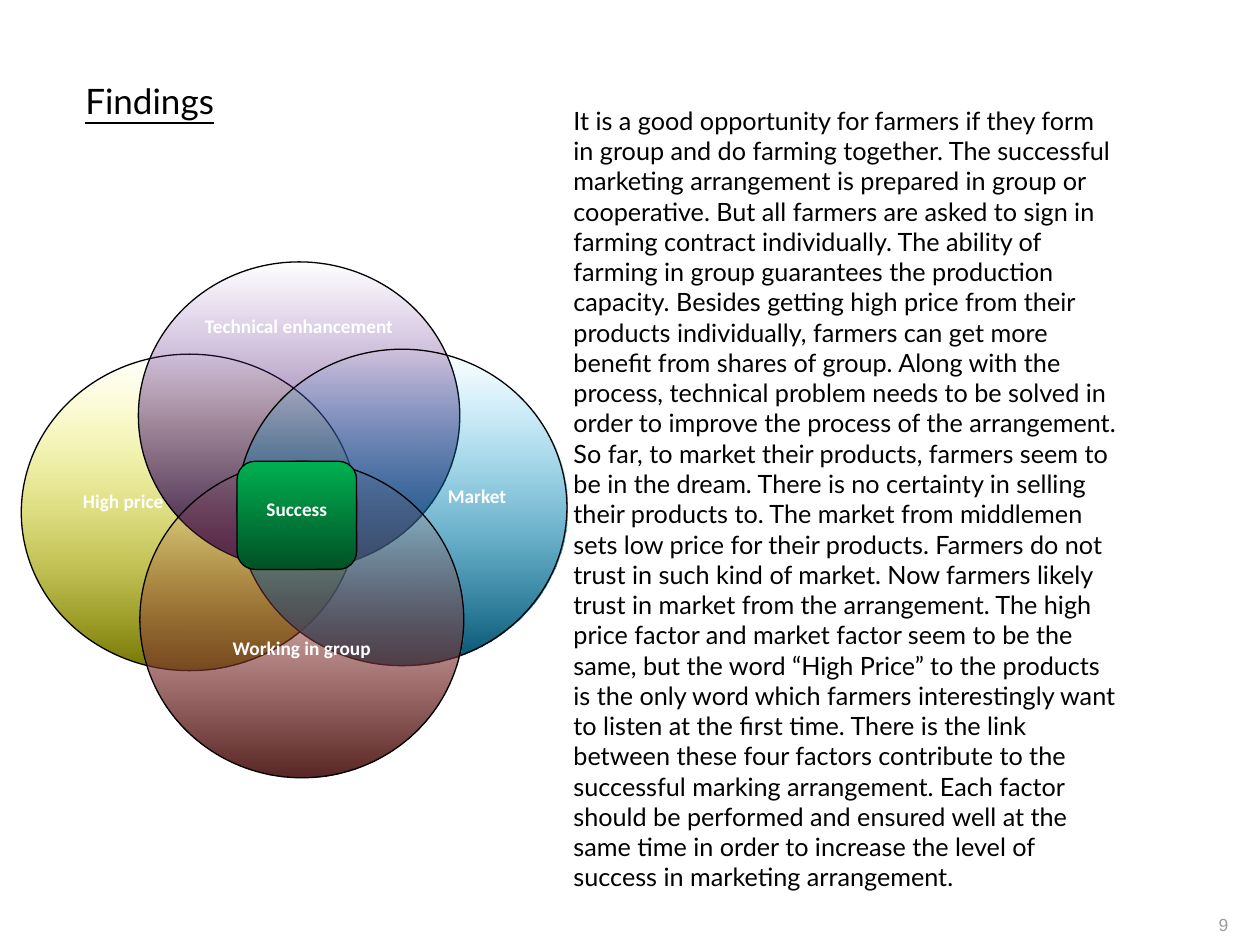
from lxml import etree
from pptx import Presentation, util as u
from pptx.dml.color import RGBColor
from pptx.enum import shapes, text
from pptx.oxml.ns import qn

FINDINGS = [
    "It is a good opportunity for farmers if they form in group and do farming together.",
    "The successful marketing arrangement is prepared in group or cooperative.",
    "But all farmers are asked to sign in farming contract individually.",
    "The ability of farming in group guarantees the production capacity.",
    "Besides getting high price from their products individually, farmers can get more",
    "benefit from shares of group.",
    "Along with the process, technical problem needs to be solved in order to improve",
    "the process of the arrangement.",
    "So far, to market their products, farmers seem to be in the dream.",
    "There is no certainty in selling their products to.",
    "The market from middlemen sets low price for their products.",
    "Farmers do not trust in such kind of market.",
    "Now farmers likely trust in market from the arrangement.",
    "The high price factor and market factor seem to be the same, but the word",
    "“High Price” to the products is the only word which farmers interestingly want",
    "to listen at the first time.",
    "There is the link between these four factors contribute to the successful",
    "marking arrangement.",
    "Each factor should be performed and ensured well at the same time in order to",
    "increase the level of success in marketing arrangement.",
]
OVAL = shapes.MSO_SHAPE.OVAL
ROUNDED = shapes.MSO_SHAPE.ROUNDED_RECTANGLE
LEFT, CENTER, RIGHT = text.PP_ALIGN.LEFT, text.PP_ALIGN.CENTER, text.PP_ALIGN.RIGHT
TOP, MIDDLE, BOTTOM = text.MSO_ANCHOR.TOP, text.MSO_ANCHOR.MIDDLE, text.MSO_ANCHOR.BOTTOM

FACTORS = [
    ("High price", OVAL, (0, 1.86, 6.78, 6.38), "FFFF00", "757500", LEFT, 1.78),
    ("Technical enhancement", OVAL, (2.36, 0, 6.48, 6.2), "7030A0", "33164A", CENTER, 0.15),
    ("Market", OVAL, (4.35, 1.76, 6.65, 6.38), "00B0F0", "00516E", RIGHT, 1.78),
    ("Working in group", OVAL, (2.39, 4.02, 6.53, 6.38), "C0504D", "582523", CENTER, 2.59),
    ("Success", ROUNDED, (4.35, 4.02, 2.41, 2.18), "00B050", "005125", CENTER, 0.61),
]


def color(value):
    return RGBColor.from_string(value)


def apply(target, values):
    for name, value in values.items():
        setattr(target, name, value)


def write(box, words, font, ink, align, frame):
    body = box.text_frame
    apply(body, {"word_wrap": True, "auto_size": text.MSO_AUTO_SIZE.NONE, **frame})
    para = body.paragraphs[0]
    para.alignment = align
    span = para.add_run()
    span.text = words
    apply(span.font, font)
    span.font.color.rgb = color(ink)


def margins(size):
    sides = ("left", "top", "right", "bottom")
    return {f"margin_{side}": u.Cm(size) for side in sides}


def add_findings(page, box):
    title = page.shapes.title
    apply(title, dict(zip(("left", "top", "width", "height"), map(u.Cm, box))))
    write(title, " ".join(FINDINGS), {"name": "Lato", "size": u.Pt(14.4)}, "000000", LEFT,
          {"vertical_anchor": MIDDLE, **margins(0.13)})


def add_heading(page, box):
    heading = page.shapes.add_textbox(*map(u.Cm, box))
    write(heading, "Findings", {"name": "Lato", "size": u.Pt(20), "underline": True},
          "000000", LEFT, {"vertical_anchor": TOP})


def add_number(page, box):
    number = page.shapes.add_textbox(*map(u.Cm, box))
    write(number, "9", {"name": "Arial", "size": u.Pt(10)}, "9D9B9A", RIGHT,
          {"vertical_anchor": BOTTOM, **margins(0)})


def shade(shape, start, end):
    shape.fill.gradient()
    shape.fill.gradient_angle = 270
    for stop, value, position in zip(shape.fill.gradient_stops, (start, end), (0, 1)):
        stop.color.rgb = color(value)
        stop.position = position


def clear_first_stop(shape):
    first = shape.element.xpath(".//a:gs/a:srgbClr")[0]
    etree.SubElement(first, qn("a:alpha")).set("val", "0")


def add_factors(page, left, top):
    group = page.shapes.add_group_shape()
    for label, kind, (x, y, width, height), start, end, align, inset in FACTORS:
        factor = group.shapes.add_shape(
            kind, *map(u.Cm, (left + x, top + y, width, height)))
        factor.shadow.inherit = False
        shade(factor, start, end)
        if kind == OVAL:
            clear_first_stop(factor)
        factor.line.color.rgb = color("000000")
        factor.line.width = u.Pt(0.75)
        write(factor, label, {"name": "Calibri", "size": u.Pt(11), "bold": True},
              "FFFFFF", align, {"vertical_anchor": TOP, "margin_top": u.Cm(inset)})


def main():
    deck = Presentation()
    deck.slide_width, deck.slide_height = u.Cm(25.4), u.Cm(19.05)
    page = deck.slides.add_slide(deck.slide_layouts[5])
    add_findings(page, (11.43, 1.9, 11.23, 16.3))
    add_number(page, (22.66, 17.83, 2.1, 1.02))
    add_heading(page, (1.47, 1.47, 3.18, 1.9))
    add_factors(page, 0.43, 5.28)
    deck.save("out.pptx")


if __name__ == "__main__":
    main()
